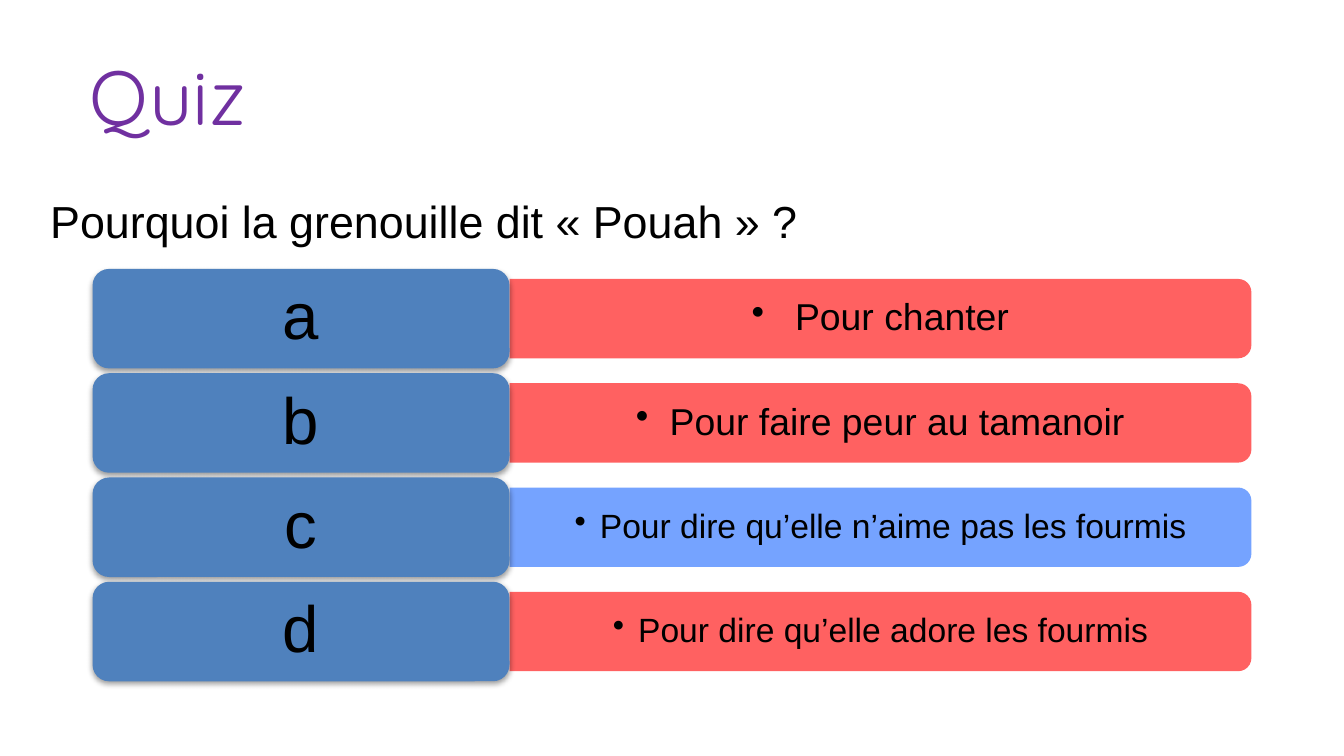
from dataclasses import dataclass

from lxml import etree
from pptx import Presentation
from pptx import util as u
from pptx.dml.color import RGBColor
from pptx.enum import shapes, text
from pptx.oxml.ns import qn


@dataclass(frozen=True)
class Theme:
    title_color: str = "7030A0"
    ink: str = "000000"
    label_fill: str = "4F81BD"
    wrong: str = "FF5050"
    right: str = "6699FF"
    title_font: str = "Quicksand"
    body_font: str = "Arial"
    title_size: float = 41
    question_size: float = 24
    label_size: float = 35
    long_answer_size: float = 18
    answer_size: float = 20


def add_xml(parent, tag, **attributes):
    values = {name: str(value) for name, value in attributes.items()}
    return etree.SubElement(parent, qn(tag), values)


class QuizSlide:
    def __init__(self, slide, theme):
        self.slide = slide
        self.theme = theme

    def set_text(self, frame, words, size, color=None, font=None,
                 align=text.PP_ALIGN.LEFT, anchor=text.MSO_ANCHOR.MIDDLE, inset=0):
        frame.text = words
        frame.word_wrap = True
        frame.vertical_anchor = anchor
        frame.margin_left = frame.margin_right = u.Cm(inset)
        frame.margin_top = frame.margin_bottom = u.Cm(inset / 2)
        paragraph = frame.paragraphs[0]
        paragraph.alignment = align
        style = paragraph.runs[0].font
        style.name = font or self.theme.body_font
        style.size = u.Pt(size)
        style.color.rgb = RGBColor.from_string(color or self.theme.ink)
        return paragraph

    def title(self, words, left, top, width, height):
        title = self.slide.shapes.title
        title.left, title.top = u.Cm(left), u.Cm(top)
        title.width, title.height = u.Cm(width), u.Cm(height)
        self.set_text(title.text_frame, words, self.theme.title_size,
                      self.theme.title_color, self.theme.title_font)

    def text_box(self, words, left, top, width, height, size, **style):
        box = self.slide.shapes.add_textbox(
            u.Cm(left), u.Cm(top), u.Cm(width), u.Cm(height))
        return self.set_text(box.text_frame, words, size, **style)

    def block(self, preset, left, top, width, height, color):
        block = self.slide.shapes.add_shape(
            preset, u.Cm(left), u.Cm(top), u.Cm(width), u.Cm(height))
        block.shadow.inherit = False
        block.fill.solid()
        block.fill.fore_color.rgb = RGBColor.from_string(color)
        block.line.fill.background()
        return block

    def answer_bar(self, words, left, middle, width, height, color, size, indent):
        """Bar rounded on its right side, with a centred bullet line over it."""
        bar = self.block(shapes.MSO_SHAPE.ROUND_2_SAME_RECTANGLE,
                         left + (width - height) / 2, middle - width / 2,
                         height, width, color)
        bar.rotation = 90
        fill_color = bar._element.spPr.find(qn("a:solidFill"))[0]
        add_xml(fill_color, "a:alpha", val=90000)

        answer = self.text_box(words, left, middle - height / 2, width, height,
                               size, align=text.PP_ALIGN.CENTER)
        answer.line_spacing = 0.9
        properties = answer._p.get_or_add_pPr()
        properties.set("marL", str(u.Cm(indent)))
        properties.set("indent", str(-u.Cm(indent)))
        add_xml(properties, "a:buChar", char="•")

    def label(self, letter, left, top, width, height):
        label = self.block(shapes.MSO_SHAPE.ROUNDED_RECTANGLE,
                           left, top, width, height, self.theme.label_fill)
        effects = label._element.spPr.find(qn("a:effectLst"))
        shadow = add_xml(effects, "a:outerShdw", blurRad=u.Pt(3.1), dist=u.Pt(1.6),
                         dir=5400000, rotWithShape=0)
        add_xml(add_xml(shadow, "a:srgbClr", val="000000"), "a:alpha", val=38000)
        paragraph = self.set_text(label.text_frame, letter, self.theme.label_size,
                                  align=text.PP_ALIGN.CENTER, inset=0.38)
        paragraph.line_spacing = 0.9


def main():
    theme = Theme()
    deck = Presentation()
    deck.slide_width, deck.slide_height = u.Cm(25.4), u.Cm(14.28)
    title_only = deck.slide_layouts[5]
    quiz = QuizSlide(deck.slides.add_slide(title_only), theme)

    quiz.title("Quiz", 1.7, 0.4, 21.9, 2.78)

    answers = [
        ("a", "Pour chanter", theme.wrong, theme.answer_size, 0.82),
        ("b", "Pour faire peur au tamanoir", theme.wrong, theme.answer_size, 0.64),
        ("c", "Pour dire qu’elle n’aime pas les fourmis", theme.right,
         theme.long_answer_size, 0.48),
        ("d", "Pour dire qu’elle adore les fourmis", theme.wrong,
         theme.long_answer_size, 0.48),
    ]
    left, first_top, pitch = 1.75, 5.08, 1.97
    label_width, label_height = 7.88, 1.88
    bar_width, bar_height = 14.02, 1.5
    for row, (letter, answer, color, size, indent) in enumerate(answers):
        top = first_top + row * pitch
        quiz.answer_bar(answer, left + label_width, top + label_height / 2,
                        bar_width, bar_height, color, size, indent)
        quiz.label(letter, left, top, label_width, label_height)

    quiz.text_box("Pourquoi la grenouille dit « Pouah » ?", 0.7, 3.53, 22.8, 1.28,
                  theme.question_size, anchor=text.MSO_ANCHOR.TOP, inset=0.25)
    deck.save("out.pptx")


if __name__ == "__main__":
    main()
